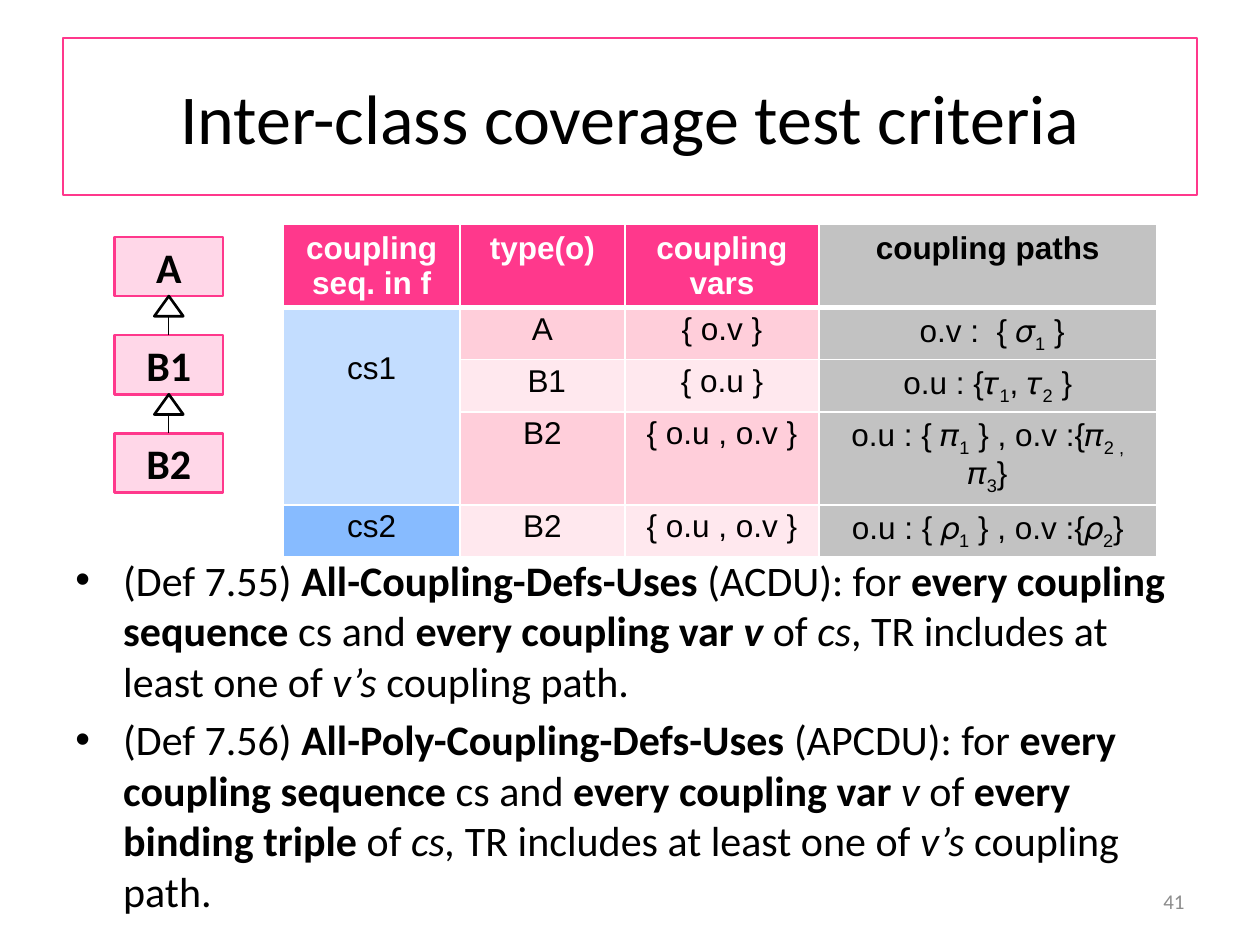
from lxml import etree
from pptx import Presentation
from pptx.dml.color import RGBColor
from pptx.enum.shapes import MSO_CONNECTOR as Connector, MSO_SHAPE as Shape
from pptx.enum.text import MSO_ANCHOR as Anchor, PP_ALIGN as Align
from pptx.oxml.ns import qn
from pptx.util import Inches, Pt

PINK, PALE_PINK, GRAY, BLACK, WHITE = "FF388C", "FFD7E8", "C2C2C2", "000000", "FFFFFF"
BAND_DARK, BAND_LIGHT = "FFCEDA", "FFE8EE"
CLASSES = ["A", "B1", "B2"]
HEADERS = ["coupling seq. in f", "type(o)", "coupling vars", "coupling paths"]
COLUMN_WIDTHS = [1.4, 1.31, 1.54, 2.68]
ROWS = [
    ["cs1", "A", "{ o.v }", [(" o.v :  { 𝜎", ""), ("1", "_"), (" }", "")]],
    ["", " B1", "{ o.u }",
     [("o.u : {𝜏", ""), ("1", "_"), (", 𝜏", ""), ("2", "_"), (" }", "")]],
    ["", "B2", "{ o.u , o.v }",
     [("o.u : { 𝜋", ""), ("1", "_"), (" } , o.v :{𝜋", ""), ("2 , ", "_"),
      ("𝜋", ""), ("3", "_"), ("}", "")]],
    ["cs2", "B2", "{ o.u , o.v }",
     [("o.u : { 𝜌", ""), ("1", "_"), (" } , o.v :{𝜌", ""), ("2", "_"), ("}", "")]],
]
DEFINITIONS = [
    [("(Def 7.55) ", ""), ("All-Coupling-Defs-Uses", "b"), (" (ACDU): for ", ""),
     ("every coupling sequence", "b"), (" cs and ", ""), ("every coupling var ", "b"),
     ("v", "bi"), (" of ", ""), ("cs", "i"), (", TR includes at least one of ", ""),
     ("v’s", "i"), (" coupling path.", "")],
    [("(Def 7.56) ", ""), ("All-Poly-Coupling-Defs-Uses ", "b"), ("(APCDU): for ", ""),
     ("every coupling sequence", "b"), (" cs and ", ""), ("every coupling var ", "b"),
     ("v", "i"), (" of ", ""), ("every binding triple", "b"), (" of ", ""), ("cs, ", "i"),
     ("TR includes at least one of ", ""), ("v’s", "i"), (" coupling path.", "")],
]


def rgb(value):
    """Return the colour of a hex string."""
    return RGBColor.from_string(value)


def apply(target, values):
    """Set attributes of the target from a dict."""
    for name, value in values.items():
        setattr(target, name, value)


def write(paragraph, content, size, color=BLACK, font="Calibri", bold=False, align=Align.CENTER):
    """Fill a paragraph with plain text or (text, marks) pairs; marks are b, i and _."""
    paragraph.alignment = align
    for text, marks in [(content, "")] if isinstance(content, str) else content:
        run = paragraph.add_run()
        run.text = text
        apply(run.font, {"name": font, "size": Pt(size), "bold": bold or "b" in marks,
                         "italic": "i" in marks})
        run.font.color.rgb = rgb(color)
        if "_" in marks:
            run._r.get_or_add_rPr().set("baseline", "-25000")


def add_outlined(slide, kind, box, fill, line, width):
    """Add a preset shape with an outline and an optional fill."""
    shape = slide.shapes.add_shape(kind, *map(Inches, box))
    shape.shadow.inherit = False
    if fill:
        shape.fill.solid()
        shape.fill.fore_color.rgb = rgb(fill)
    else:
        shape.fill.background()
    shape.line.color.rgb = rgb(line)
    shape.line.width = Pt(width)
    apply(shape.text_frame, {"word_wrap": True, "vertical_anchor": Anchor.MIDDLE})
    return shape


def add_title(slide, box):
    """Add the framed title."""
    shape = add_outlined(slide, Shape.RECTANGLE, box, None, PINK, 1)
    write(shape.text_frame.paragraphs[0], "Inter-class coverage test criteria", 40)


def add_hierarchy(slide, left, top, width, height, pitch):
    """Stack the class boxes and join each to its parent with an inheritance arrow."""
    head_width, head_height = 0.23, 0.16
    middle = left + width / 2
    for index, name in enumerate(CLASSES):
        box_top = top + index * pitch
        shape = add_outlined(slide, Shape.RECTANGLE, (left, box_top, width, height),
                             PALE_PINK, PINK, 1.5)
        write(shape.text_frame.paragraphs[0], name, 24, bold=True)
        if index:
            head_top = box_top - pitch + height
            add_outlined(slide, Shape.ISOSCELES_TRIANGLE,
                         (middle - head_width / 2, head_top, head_width, head_height),
                         WHITE, BLACK, 1.5)
            ends = (middle, box_top, middle, head_top + head_height)
            connector = slide.shapes.add_connector(Connector.STRAIGHT, *map(Inches, ends))
            connector.begin_connect(shape, 0)
            connector.line.color.rgb = rgb(BLACK)
            connector.line.width = Pt(0.75)
            etree.SubElement(connector._element.spPr, qn("a:effectLst"))


def set_borders(cell, bottom):
    """Draw white cell borders, with the given width in points at the bottom."""
    properties = cell._tc.get_or_add_tcPr()
    for position, side in enumerate("LRTB"):
        line = etree.Element(qn(f"a:ln{side}"), w=str(Pt(bottom if side == "B" else 1)))
        fill = etree.SubElement(line, qn("a:solidFill"))
        etree.SubElement(fill, qn("a:srgbClr"), val=WHITE)
        properties.insert(position, line)


def add_coupling_table(slide, left, top, row_height):
    """Add the table of coupling sequences, types, variables and paths."""
    content = [HEADERS] + ROWS
    box = (left, top, sum(COLUMN_WIDTHS), row_height * len(content))
    table = slide.shapes.add_table(len(content), len(HEADERS), *map(Inches, box)).table
    for column, width in zip(table.columns, COLUMN_WIDTHS):
        column.width = Inches(width)
    for row_index, row in enumerate(content):
        header = row_index == 0
        band = PINK if header else BAND_DARK if row_index % 2 else BAND_LIGHT
        sequence = PINK if header else "87BBFF" if row[0] == "cs2" else "C3DDFF"
        for column_index, (text, fill) in enumerate(zip(row, [sequence, band, band, GRAY])):
            cell = table.cell(row_index, column_index)
            cell.fill.solid()
            cell.fill.fore_color.rgb = rgb(fill)
            cell.margin_bottom = Inches(0.01 if header else 0.04)
            set_borders(cell, 3 if header else 1)
            if text:
                color = WHITE if fill == PINK else BLACK
                paragraph = cell.text_frame.paragraphs[0]
                paragraph.line_spacing = 1.0 if header else 0.95
                write(paragraph, text, 18, color, "Arial", header)
    sequence_cell = table.cell(1, 0)
    sequence_cell.merge(table.cell(3, 0))
    sequence_cell.margin_top = Inches(0.36)


def add_definitions(slide, box):
    """Add the bulleted definitions."""
    frame = slide.shapes.add_textbox(*map(Inches, box)).text_frame
    frame.word_wrap = True
    for index, definition in enumerate(DEFINITIONS):
        paragraph = frame.add_paragraph() if index else frame.paragraphs[0]
        apply(paragraph, {"space_before": Pt(4.8), "line_spacing": 1.0})
        write(paragraph, definition, 24, align=Align.LEFT)
        properties = paragraph._p.get_or_add_pPr()
        properties.set("marL", str(Inches(0.38)))
        properties.set("indent", str(-Inches(0.38)))
        etree.SubElement(properties, qn("a:buFont"), typeface="Arial")
        etree.SubElement(properties, qn("a:buChar"), char="•")


def add_slide_number(slide, box):
    """Add the slide number."""
    frame = slide.shapes.add_textbox(*map(Inches, box)).text_frame
    apply(frame, {"word_wrap": True, "vertical_anchor": Anchor.MIDDLE})
    write(frame.paragraphs[0], "41", 12, "8C8C8C", align=Align.RIGHT)


def main():
    """Build and save the slide."""
    presentation = Presentation()
    apply(presentation, {"slide_width": Inches(10), "slide_height": Inches(7.5)})
    slide = presentation.slides.add_slide(presentation.slide_layouts[6])
    add_title(slide, (0.5, 0.3, 9, 1.25))
    add_definitions(slide, (0.5, 4.35, 9, 3.01))
    add_slide_number(slide, (7.17, 6.95, 2.33, 0.4))
    add_hierarchy(slide, 0.91, 1.88, 0.86, 0.47, 0.78)
    add_coupling_table(slide, 2.25, 1.78, 0.41)
    presentation.save("out.pptx")


if __name__ == "__main__":
    main()
